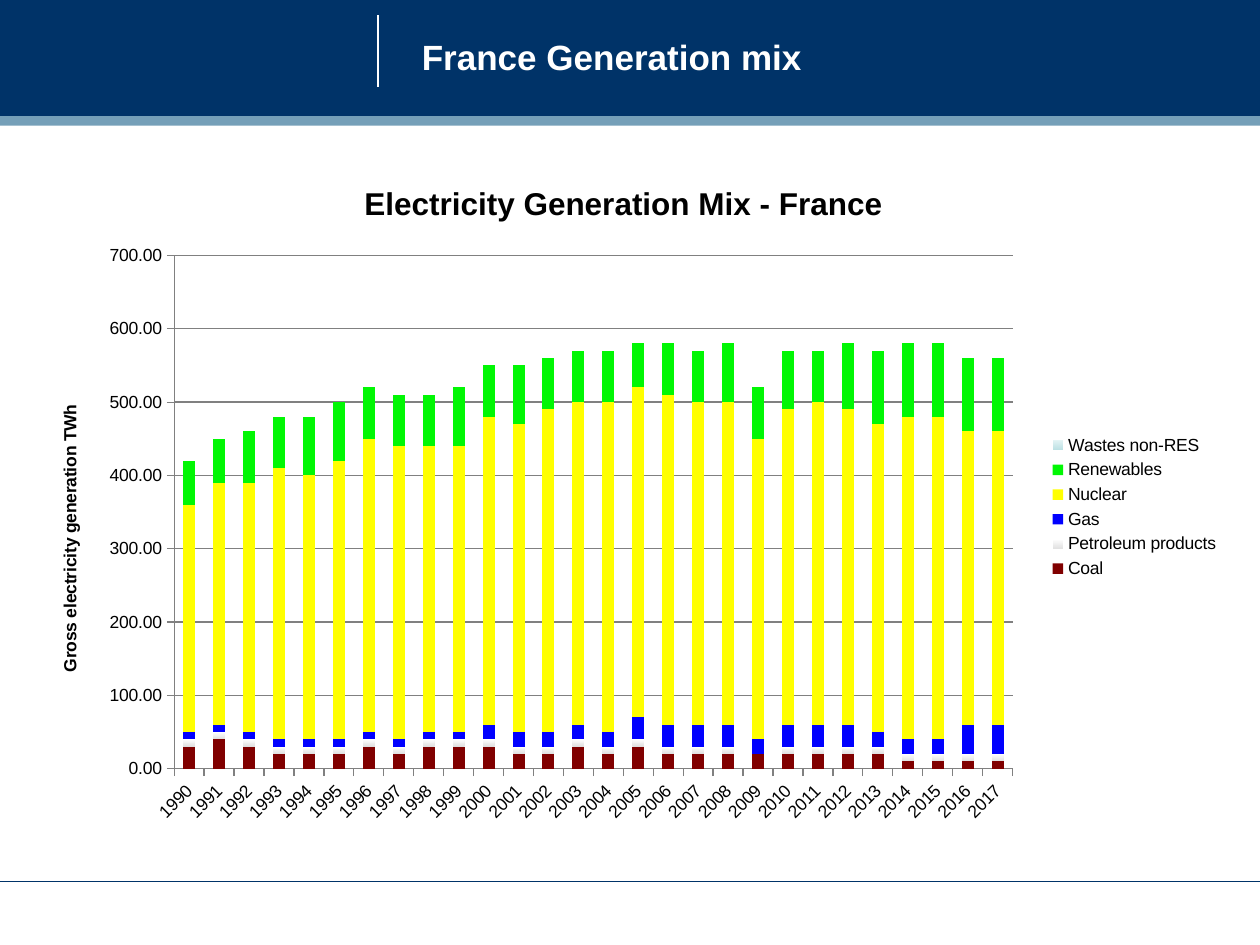
from dataclasses import dataclass
from lxml import etree
from pptx import Presentation
from pptx.chart.data import CategoryChartData
from pptx.dml.color import RGBColor
from pptx.enum.chart import XL_CHART_TYPE, XL_LEGEND_POSITION, XL_TICK_MARK
from pptx.enum.shapes import MSO_CONNECTOR, MSO_SHAPE
from pptx.enum.text import MSO_ANCHOR
from pptx.oxml.ns import qn
from pptx.util import Inches, Pt

STACK = XL_CHART_TYPE.COLUMN_STACKED
RIGHT = XL_LEGEND_POSITION.RIGHT
OUT = XL_TICK_MARK.OUTSIDE
LINE = MSO_CONNECTOR.STRAIGHT
RECT = MSO_SHAPE.RECTANGLE
MIDDLE = MSO_ANCHOR.MIDDLE

YEARS = range(1990, 2018)
MIX = [
    ("Coal", ["800000"],
     [30, 40, 30, 20, 20, 20, 30, 20, 30, 30, 30, 20, 20, 30,
      20, 30, 20, 20, 20, 20, 20, 20, 20, 20, 10, 10, 10, 10]),
    ("Petroleum products", ["E0E0E0", "FFFFFF"],
     [0 if year == 2009 else 10 for year in YEARS]),
    ("Gas", ["0000FF"],
     [10, 10, 10, 10, 10, 10, 10, 10, 10, 10, 20, 20, 20, 20,
      20, 30, 30, 30, 30, 20, 30, 30, 30, 20, 20, 20, 40, 40]),
    ("Nuclear", ["FFFF00"],
     [310, 330, 340, 370, 360, 380, 400, 400, 390, 390, 420, 420, 440, 440,
      450, 450, 450, 440, 440, 410, 430, 440, 430, 420, 440, 440, 400, 400]),
    ("Renewables", ["01F704"],
     [60, 60, 70, 70, 80, 80, 70, 70, 70, 80, 70, 80, 70, 70,
      70, 60, 70, 70, 80, 70, 80, 70, 90, 100, 100, 100, 100, 100]),
    ("Wastes non-RES", ["BBE0E3", "E4F4F5"], [0] * len(YEARS)),
]


@dataclass
class Theme:
    navy: str = "003368"
    steel: str = "759FB8"
    white: str = "FFFFFF"
    black: str = "000000"
    grid: str = "808080"
    face: str = "Arial"
    head: int = 20
    title: int = 18
    body: int = 10
    rule: float = 0.75


def put(item, values):
    for name, value in values.items():
        setattr(item, name, value)


def place(node, index, **shares):
    for old in node.findall(qn("c:layout")):
        node.remove(old)
    layout = etree.Element(qn("c:layout"))
    manual = etree.SubElement(layout, qn("c:manualLayout"))
    if "w" in shares:
        shares = {"layoutTarget": "inner", "xMode": "edge", "yMode": "edge", **shares}
    else:
        shares = {"xMode": "edge", "yMode": "edge", **shares}
    for name, value in shares.items():
        etree.SubElement(manual, qn("c:" + name)).set("val", str(value))
    node.insert(index, layout)


class Deck:
    def __init__(self, theme):
        self.theme = theme
        self.show = Presentation()
        put(self.show, {"slide_width": Inches(10), "slide_height": Inches(7.5)})
        self.slide = self.show.slides.add_slide(self.show.slide_layouts[6])

    def span(self, *shares):
        sides = (self.show.slide_width, self.show.slide_height) * 2
        return [round(share * side) for share, side in zip(shares, sides)]

    def style(self, font, size, color, bold=False):
        put(font, {"name": self.theme.face, "size": Pt(size), "bold": bold})
        font.color.rgb = RGBColor.from_string(color)

    def stroke(self, line, color):
        line.color.rgb = RGBColor.from_string(color)
        line.width = Pt(self.theme.rule)

    def band(self, box, color):
        shape = self.slide.shapes.add_shape(RECT, *self.span(*box))
        shape.shadow.inherit = False
        shape.fill.solid()
        shape.fill.fore_color.rgb = RGBColor.from_string(color)
        shape.line.fill.background()

    def rule(self, ends, color):
        line = self.slide.shapes.add_connector(LINE, *self.span(*ends))
        self.stroke(line.line, color)
        etree.SubElement(line._element.spPr, qn("a:effectLst"))

    def text(self, box, words):
        frame = self.slide.shapes.add_textbox(*self.span(*box)).text_frame
        pad = Inches(0.1)
        put(frame, {"text": words, "word_wrap": True, "vertical_anchor": MIDDLE,
                    "margin_left": pad, "margin_right": pad,
                    "margin_top": pad, "margin_bottom": pad})
        run = frame.paragraphs[0].runs[0]
        self.style(run.font, self.theme.head, self.theme.white, True)

    def label(self, title, words, size, x, y):
        title.text_frame.text = words
        run = title.text_frame.paragraphs[0].runs[0]
        self.style(run.font, size, self.theme.black, True)
        place(title._element, 1, x=x, y=y)

    def paint(self, series, colors):
        fill = series.format.fill
        if len(colors) == 1:
            fill.solid()
            fill.fore_color.rgb = RGBColor.from_string(colors[0])
            return
        fill.gradient()
        fill.gradient_angle = 90
        for stop, color in zip(fill.gradient_stops, colors):
            stop.color.rgb = RGBColor.from_string(color)

    def chart(self, box, title, unit, mix):
        data = CategoryChartData(number_format="#,##0.00")
        data.categories = YEARS
        for name, _, values in mix:
            data.add_series(name, values)
        frame = self.slide.shapes.add_chart(STACK, *self.span(*box), data)
        chart = frame.chart
        self.style(chart.font, self.theme.body, self.theme.black)
        put(chart, {"has_title": True, "has_legend": True})
        self.label(chart.chart_title, title, self.theme.title, 0.28, 0.03)
        put(chart.legend, {"position": RIGHT, "include_in_layout": False})
        plot = chart.plots[0]
        put(plot, {"gap_width": 150, "overlap": 100, "vary_by_categories": False})
        for series, (_, colors, _) in zip(plot.series, mix):
            self.paint(series, colors)
        years, power = chart.category_axis, chart.value_axis
        for axis in (years, power):
            axis.major_tick_mark = OUT
            self.stroke(axis.format.line, self.theme.grid)
            self.style(axis.tick_labels.font, self.theme.body, self.theme.black)
        years._element.find(qn("c:txPr")).find(qn("a:bodyPr")).set("rot", "-2700000")
        put(power, {"minimum_scale": 0, "maximum_scale": 700, "major_unit": 100,
                    "has_major_gridlines": True, "has_title": True})
        put(power.tick_labels, {"number_format": "#,##0.00",
                                "number_format_is_linked": False})
        self.stroke(power.major_gridlines.format.line, self.theme.grid)
        self.label(power.axis_title, unit, self.theme.body, 0.03, 0.35)
        turn = power.axis_title.text_frame._txBody.find(qn("a:bodyPr"))
        put_on = {"rot": "-5400000", "vert": "horz"}
        for name, value in put_on.items():
            turn.set(name, value)
        area = chart._chartSpace.find(qn("c:chart")).find(qn("c:plotArea"))
        place(area, 0, x=0.128, y=0.142, w=0.691, h=0.731)


def main():
    theme = Theme()
    deck = Deck(theme)
    deck.band((0, 0, 1, 0.123), theme.navy)
    deck.rule((0.3, 0.016, 0.3, 0.092), theme.white)
    deck.rule((0, 0.933, 1, 0.933), theme.navy)
    deck.band((0, 0.123, 1, 0.01), theme.steel)
    deck.text((0.325, 0.01, 0.633, 0.1), "France Generation mix")
    deck.chart((0.015, 0.165, 0.963, 0.743), "Electricity Generation Mix - France",
               "Gross electricity generation TWh", MIX)
    deck.show.save("out.pptx")


if __name__ == "__main__":
    main()
